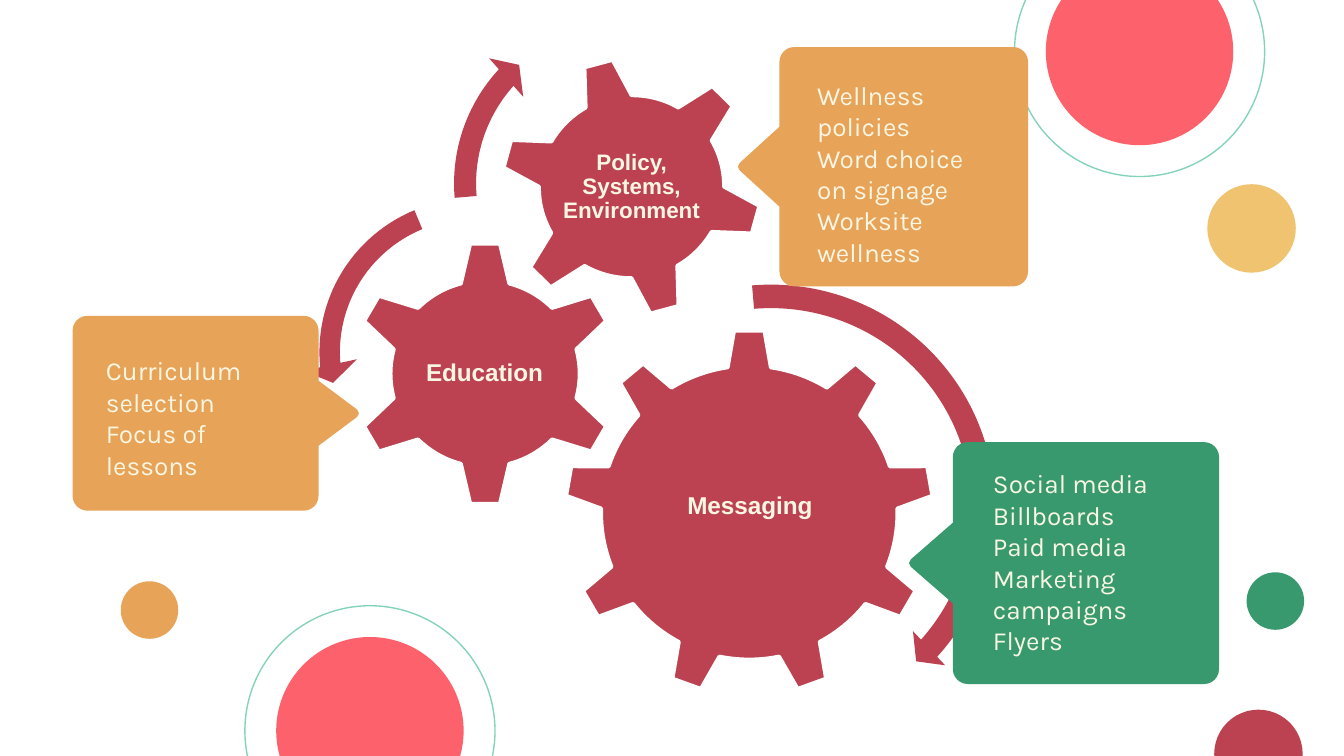
from math import cos, radians, sin

from pptx import Presentation
from pptx import util as u
from pptx.dml.color import RGBColor
from pptx.enum import shapes, text

Pt = u.Pt
KIND = shapes.MSO_SHAPE
COLORS = {
    "coral": "FD616B",
    "mint": "83D4B6",
    "yellow": "EFC370",
    "green": "39996E",
    "red": "BC4251",
    "orange": "E7A357",
    "cream": "F9F6E3",
    "white": "FFFFFF",
}

deck = Presentation()
deck.slide_width, deck.slide_height = Pt(720), Pt(405)
slide = deck.slides.add_slide(deck.slide_layouts[6])


def paint(shape, fill=None, line=None, width=0.75):
    shape.shadow.inherit = False
    if fill:
        shape.fill.solid()
        shape.fill.fore_color.rgb = RGBColor.from_string(COLORS[fill])
    else:
        shape.fill.background()
    if line:
        shape.line.color.rgb = RGBColor.from_string(COLORS[line])
        shape.line.width = Pt(width)
    else:
        shape.line.fill.background()


def write(box, lines, margin, size, font, bold=False, align=None, spacing=None):
    left, top, width, height = map(Pt, box)
    frame = slide.shapes.add_textbox(left, top, width, height).text_frame
    frame.word_wrap = True
    frame.margin_left = frame.margin_right = Pt(margin)
    frame.margin_top = frame.margin_bottom = Pt(margin)
    frame.text = "\n".join(lines)
    for paragraph in frame.paragraphs:
        paragraph.alignment = align
        paragraph.line_spacing = spacing
        for run in paragraph.runs:
            run.font.size, run.font.name, run.font.bold = Pt(size), font, bold
            run.font.color.rgb = RGBColor.from_string(COLORS[font_color])
    return frame


font_color = "cream"

circles = [
    (610.5, 27.6, 134, None, "mint"),
    (610.5, 27.6, 100.4, "coral", None),
    (198.2, 391.5, 134, None, "mint"),
    (198.2, 391.5, 100.4, "coral", None),
    (670.5, 122.4, 47.4, "yellow", None),
    (683.2, 322, 30.8, "green", None),
    (674.2, 403.9, 47.4, "red", None),
    (80.1, 326.8, 30.8, "orange", None),
]
for x, y, size, fill, line in circles:
    circle = slide.shapes.add_shape(
        KIND.OVAL, Pt(x - size / 2), Pt(y - size / 2), Pt(size), Pt(size))
    paint(circle, fill, line)

gears = [
    ("Messaging", KIND.GEAR_9, (302.4, 176.4, 198, 196.6), 0,
     (342.7, 221, 118, 100.8), 13),
    ("Education", KIND.GEAR_6, (187.9, 128.9, 144, 142.6), 0,
     (223.9, 164.9, 71.3, 70.6), 13),
    ("Policy, Systems, Environment", KIND.GEAR_6, (267.8, 30.2, 141.1, 139.7), 345,
     (298.8, 61.2, 79.2, 78.5), 12),
]
for label, kind, box, turn, label_box, size in gears:
    gear = slide.shapes.add_shape(kind, *map(Pt, box))
    gear.rotation = turn
    paint(gear, "red", "white", 2)
    frame = write(label_box, [label], 1.4, size, "Arial", True,
                  text.PP_ALIGN.CENTER, 0.9)
    frame.vertical_anchor = text.MSO_ANCHOR.MIDDLE

arrows = [
    (KIND.CIRCULAR_ARROW, (286.6, 146.2, 252.7, 251.3),
     (0.05, 2.99, 25, 159.1, 0.05)),
    (KIND.LEFT_CIRCULAR_ARROW, (162, 97.2, 183.6, 182.9),
     (0.06, 4.3, 104.89, 148.38, 0.08)),
    (KIND.CIRCULAR_ARROW, (235.4, 0, 198, 196.6),
     (0.06, 3.94, 133.14, 105.08, 0.07)),
]
for kind, box, adjustments in arrows:
    arrow = slide.shapes.add_shape(kind, *map(Pt, box))
    for i, value in enumerate(adjustments):
        arrow.adjustments[i] = value
    paint(arrow, "red")

RADIUS = 8
callouts = [
    ("green", (510.5, 236.9, 142.6, 129.6), -23.5, (524.9, 243.4, 113, 116.6),
     ["Social media", "Billboards", "Paid media", "Marketing campaigns", "Flyers"]),
    ("orange", (38.9, 169.2, 131.8, 104.4), 21.6, (49.7, 182.9, 113, 99.4),
     ["Curriculum selection", "Focus of lessons"]),
    ("orange", (417.6, 25.2, 133.2, 128.2), -22.3, (430.6, 35.3, 108.7, 116.6),
     ["Wellness policies", "Word choice on signage", "Worksite wellness"]),
]
for fill, (left, top, width, height), tail, text_box, lines in callouts:
    side = -1 if tail < 0 else 1
    center_x, center_y = left + width / 2, top + height / 2
    edge = width / 2
    half_tail = height / 6
    tip = edge + abs(tail)
    outline = [(edge, -half_tail), (tip - 1, -2), (tip, 0), (tip - 1, 2),
               (edge, half_tail)]
    for corner, (sx, sy) in enumerate([(1, 1), (-1, 1), (-1, -1), (1, -1)]):
        for step in range(0, 91, 15):
            angle = radians(corner * 90 + step)
            outline.append((sx * (edge - RADIUS) + RADIUS * cos(angle),
                            sy * (height / 2 - RADIUS) + RADIUS * sin(angle)))
    points = [(Pt(center_x + side * x), Pt(center_y + y)) for x, y in outline]
    builder = slide.shapes.build_freeform(*points[0])
    builder.add_line_segments(points[1:], close=True)
    paint(builder.convert_to_shape(), fill)
    write(text_box, lines, 7.2, 14, "Karla")

deck.save("out.pptx")
